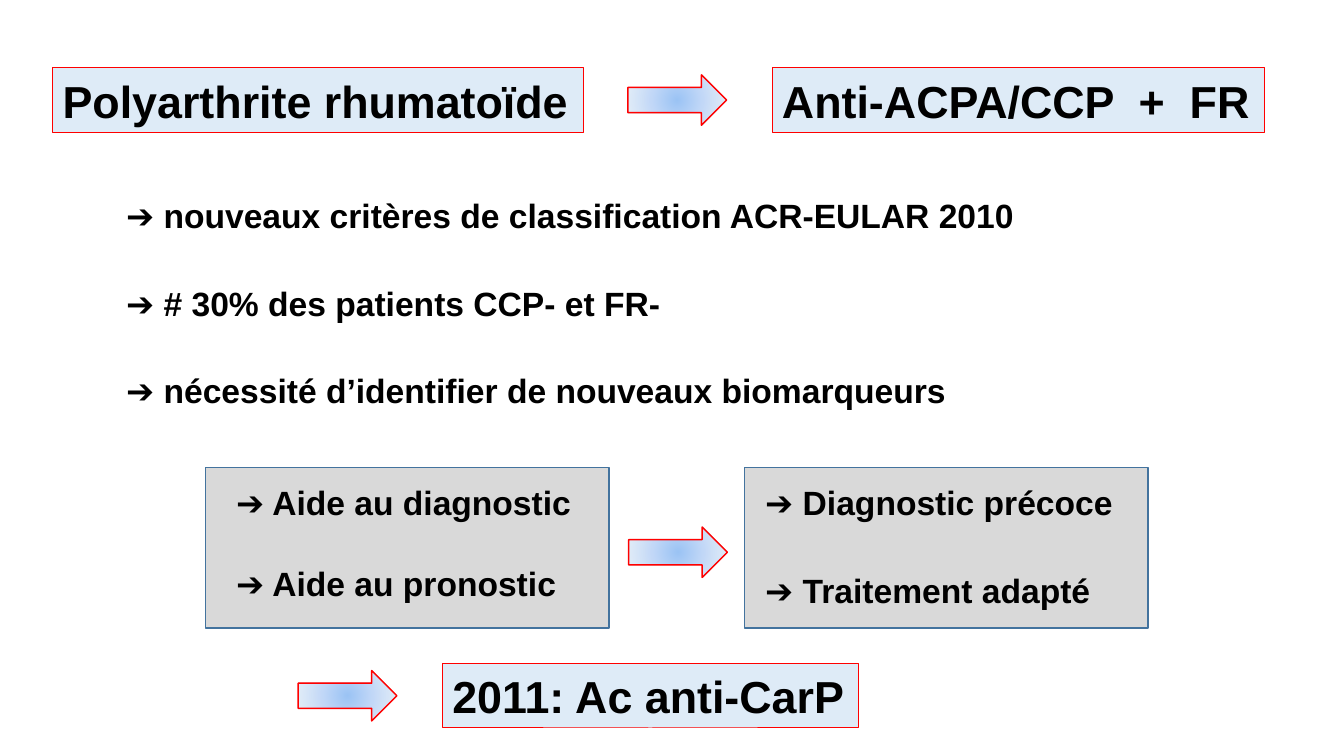
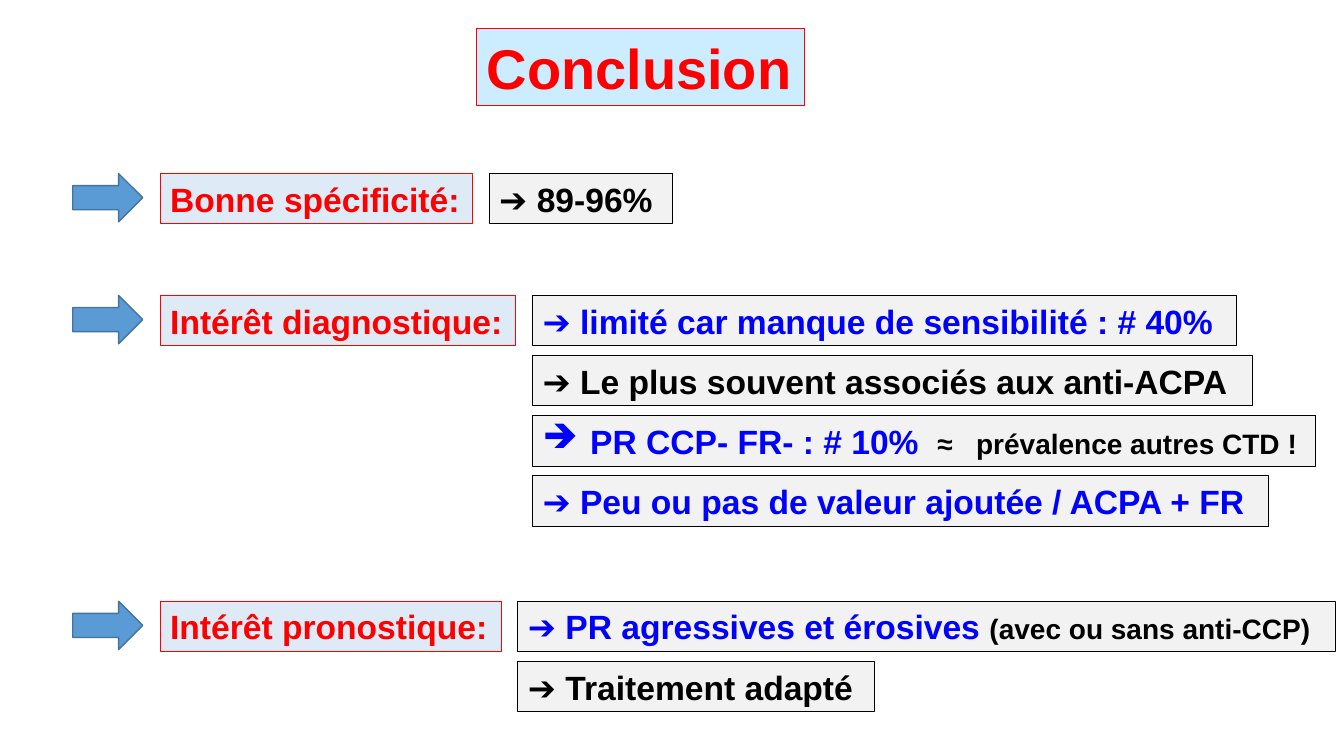
from pptx import Presentation
from pptx.dml.color import RGBColor
from pptx.enum.shapes import MSO_SHAPE
from pptx.enum.text import MSO_ANCHOR, MSO_AUTO_SIZE, PP_ALIGN
from pptx.oxml import parse_xml
from pptx.oxml.ns import nsdecls, qn
from pptx.util import Pt

BLACK = RGBColor(0x00, 0x00, 0x00)
RED = RGBColor(0xFF, 0x00, 0x00)
BLUE = RGBColor(0x00, 0x00, 0xFF)
PALE_BLUE = RGBColor(0xDE, 0xEB, 0xF7)
SKY = RGBColor(0xCC, 0xEC, 0xFF)
LIGHT_GREY = RGBColor(0xF2, 0xF2, 0xF2)
PANEL_GREY = RGBColor(0xD9, 0xD9, 0xD9)
ARROW_BLUE = RGBColor(0x5B, 0x9B, 0xD5)
STEEL = RGBColor(0x43, 0x73, 0x9E)

GLOW = f"""<a:gradFill {nsdecls('a')} rotWithShape="1"><a:gsLst>
<a:gs pos="0"><a:srgbClr val="9AC3F5"/></a:gs>
<a:gs pos="45000"><a:srgbClr val="C2D8F8"/></a:gs>
<a:gs pos="100000"><a:srgbClr val="D9E8F5"><a:alpha val="64000"/></a:srgbClr></a:gs>
</a:gsLst><a:path path="circle">
<a:fillToRect l="50000" t="50000" r="50000" b="50000"/></a:path></a:gradFill>"""


class Deck:
    """Holds the shared style and the slide being built."""

    FONT = "Arial"
    BODY, NOTE, HEADING = 24, 20, 32
    LINE_H, HEADING_H = 36, 46

    def __init__(self):
        self.prs = Presentation()
        self.prs.slide_width, self.prs.slide_height = Pt(960), Pt(540)
        self.slide = None

    def new_slide(self):
        self.slide = self.prs.slides.add_slide(self.prs.slide_layouts[5])

    def put_runs(self, sp, runs):
        """Fill a shape with one paragraph of (text, size, colour) runs."""
        tf = sp.text_frame
        tf.word_wrap = True
        tf.auto_size = MSO_AUTO_SIZE.NONE
        tf.vertical_anchor = MSO_ANCHOR.MIDDLE
        p = tf.paragraphs[0]
        p.alignment = PP_ALIGN.LEFT
        for text, size, color in runs:
            r = p.add_run()
            r.text = text
            r.font.name, r.font.size, r.font.bold = self.FONT, Pt(size), True
            r.font.color.rgb = color
        return p

    def paint(self, sp, fill, line, weight):
        sp.fill.solid()
        sp.fill.fore_color.rgb = fill
        sp.line.color.rgb = line
        sp.line.width = Pt(weight)

    def shape(self, kind, x, y, w, h, fill, line, weight=0.75):
        sp = self.slide.shapes.add_shape(kind, Pt(x), Pt(y), Pt(w), Pt(h))
        sp.shadow.inherit = False
        self.paint(sp, fill, line, weight)
        return sp

    def title(self, text, x, y, w, h, size, color, fill):
        sp = self.slide.shapes.title
        sp.left, sp.top, sp.width, sp.height = Pt(x), Pt(y), Pt(w), Pt(h)
        self.paint(sp, fill, RED, 0.75)
        self.put_runs(sp, [(text, size, color)])

    def box(self, runs, x, y, w, h, fill, line):
        sp = self.shape(MSO_SHAPE.RECTANGLE, x, y, w, h, fill, line)
        return self.put_runs(sp, runs)

    def heading(self, text, x, y, w):
        self.box([(text, self.HEADING, BLACK)], x, y, w, self.HEADING_H, PALE_BLUE, RED)

    def label(self, text, x, y, w):
        self.box([(text, self.BODY, RED)], x, y, w, self.LINE_H, PALE_BLUE, RED)

    def answer(self, runs, x, y, w):
        return self.box(runs, x, y, w, self.LINE_H, LIGHT_GREY, BLACK)

    def panel(self, x, y, w, h):
        self.shape(MSO_SHAPE.RECTANGLE, x, y, w, h, PANEL_GREY, STEEL, 1)

    def text(self, text, x, y, w):
        sp = self.slide.shapes.add_textbox(Pt(x), Pt(y), Pt(w), Pt(self.LINE_H))
        self.put_runs(sp, [(text, self.BODY, BLACK)])

    def arrow(self, x, y):
        self.shape(MSO_SHAPE.RIGHT_ARROW, x, y, 50, 34.5, ARROW_BLUE, STEEL, 1)

    def glow_arrow(self, x, y):
        """Red-edged arrow with a radial gradient."""
        sp = self.shape(MSO_SHAPE.RIGHT_ARROW, x, y, 70.5, 36, PALE_BLUE, RED, 1)
        spPr = sp._element.spPr
        spPr.replace(spPr.find(qn("a:solidFill")), parse_xml(GLOW))

    def bullet(self, p, char, indent):
        pPr = p._p.get_or_add_pPr()
        pPr.set("marL", str(Pt(indent)))
        pPr.set("indent", str(-Pt(indent)))
        pPr.append(parse_xml(f'<a:buChar {nsdecls("a")} char="{char}"/>'))


def build_biomarkers(deck):
    deck.new_slide()
    deck.title("Polyarthrite rhumatoïde", 37.5, 48.5, 379, deck.HEADING_H,
               deck.HEADING, BLACK, PALE_BLUE)
    deck.glow_arrow(448.5, 53.5)
    deck.heading("Anti-ACPA/CCP  +  FR", 551.5, 48.5, 352)

    points = ["nouveaux critères de classification ACR-EULAR 2010",
              "# 30% des patients CCP- et FR-",
              "nécessité d’identifier de nouveaux biomarqueurs"]
    for i, point in enumerate(points):
        deck.text(f"➔ {point}", 83, 135.5 + 62.7 * i, 811)

    panels = [(147, 14.5, 58, ["Aide au diagnostic", "Aide au pronostic"]),
              (532, 7.5, 63, ["Diagnostic précoce", "Traitement adapté"])]
    for x, inset, pitch, lines in panels:
        deck.panel(x, 334, 288, 114.5)
        for i, line in enumerate(lines):
            deck.text(f"➔ {line}", x + inset, 340.5 + pitch * i, 273)
    deck.glow_arrow(449, 376.5)

    deck.glow_arrow(213, 479)
    deck.heading("2011: Ac anti-CarP", 316, 474, 297)


def build_conclusion(deck):
    deck.new_slide()
    deck.title("Conclusion", 340.5, 20, 234, 55.5, 40, RED, SKY)

    body, note = deck.BODY, deck.NOTE
    bulleted = [("PR CCP- FR- : # 10%  ", body, BLUE),
                ("≈   prévalence autres CTD !", note, BLACK)]
    rows = [
        ("Bonne spécificité:", 124, 223, [
            (131, [("➔ 89-96%", body, BLACK)])]),
        ("Intérêt diagnostique:", 211, 254, [
            (503, [("➔ limité car manque de sensibilité : # 40%", body, BLUE)]),
            (514, [("➔ Le plus souvent associés aux anti-ACPA", body, BLACK)]),
            (559.5, bulleted),
            (525.5, [("➔ Peu ou pas de valeur ajoutée / ACPA + FR", body, BLUE)])]),
        ("Intérêt pronostique:", 429.5, 243.5, [
            (584, [("➔ PR agressives et érosives ", body, BLUE),
                   ("(avec ou sans anti-CCP)", note, BLACK)]),
            (255, [("➔ Traitement adapté", body, BLACK)])]),
    ]
    label_x, gap, pitch = 114.5, 12, 43
    for label, y, label_w, answers in rows:
        deck.arrow(52, y)
        deck.label(label, label_x, y, label_w)
        for i, (w, runs) in enumerate(answers):
            p = deck.answer(runs, label_x + label_w + gap, y + pitch * i, w)
            if runs is bulleted:
                deck.bullet(p, "➔", 34)


def main():
    deck = Deck()
    build_biomarkers(deck)
    build_conclusion(deck)
    deck.prs.save("out.pptx")


if __name__ == "__main__":
    main()
